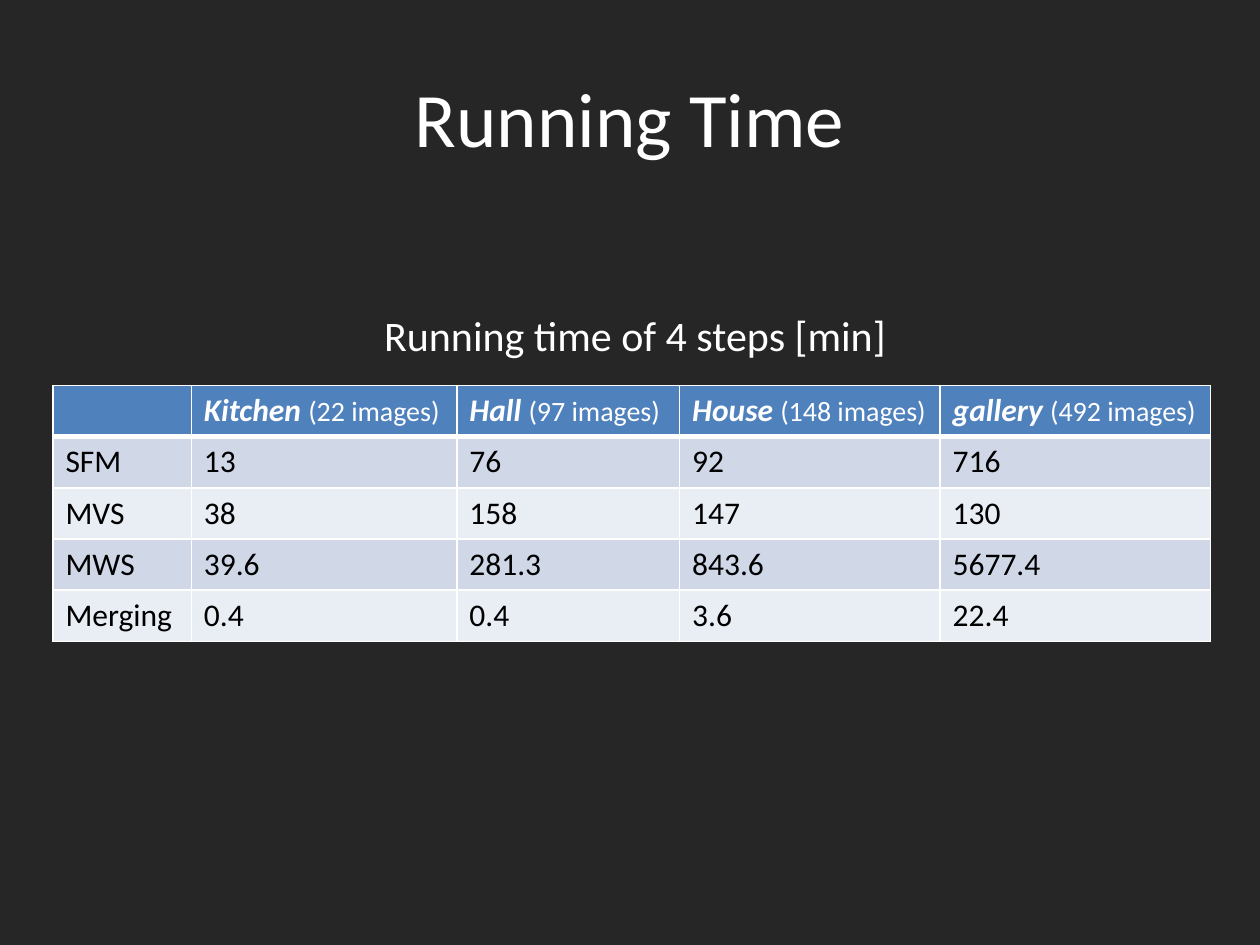
from dataclasses import dataclass

from lxml import etree
from pptx import Presentation
from pptx import util as u
from pptx.dml.color import RGBColor
from pptx.enum import text
from pptx.oxml import ns


@dataclass(frozen=True)
class Theme:
    font: str = "Calibri"
    background: str = "262626"
    light: str = "FFFFFF"
    dark: str = "000000"
    header: str = "4F81BD"
    bands: tuple = ("D0D8E8", "E9EDF4")
    title: int = 44
    caption: int = 24
    cell: int = 18
    note: int = 16
    rule: int = 1
    header_rule: int = 3


THEME = Theme()
WIDTH, HEIGHT = 10, 7.5

SCENES = [("Kitchen", 22), ("Hall", 97), ("House", 148), ("gallery", 492)]
STEPS = [
    ("SFM", "13", "76", "92", "716"),
    ("MVS", "38", "158", "147", "130"),
    ("MWS", "39.6", "281.3", "843.6", "5677.4"),
    ("Merging", "0.4", "0.4", "3.6", "22.4"),
]
COLUMNS = [1.1, 2.11, 1.77, 2.07, 2.15]


def add_text(p, content, size, color=THEME.light, bold=False, italic=False):
    r = p.add_run()
    r.text = content
    r.font.name = THEME.font
    r.font.size = u.Pt(size)
    r.font.bold = bold
    r.font.italic = italic
    r.font.color.rgb = RGBColor.from_string(color)


def place(sp, box):
    sp.left, sp.top, sp.width, sp.height = (u.Inches(v) for v in box)


def add_title(slide, box, content):
    sp = slide.shapes.title
    place(sp, box)
    tf = sp.text_frame
    tf.vertical_anchor = text.MSO_ANCHOR.MIDDLE
    p = tf.paragraphs[0]
    p.alignment = text.PP_ALIGN.CENTER
    add_text(p, content, THEME.title)


def add_caption(slide, box, content):
    sp = slide.shapes.add_textbox(*(u.Inches(v) for v in box))
    tf = sp.text_frame
    tf.word_wrap = False
    tf.auto_size = text.MSO_AUTO_SIZE.SHAPE_TO_FIT_TEXT
    add_text(tf.paragraphs[0], content, THEME.caption)


def format_cell(cell, fill, top, bottom):
    # Borders come before the fill in the cell properties
    tcPr = cell._tc.get_or_add_tcPr()
    widths = {"L": THEME.rule, "R": THEME.rule, "T": top, "B": bottom}
    for side, width in widths.items():
        ln = etree.SubElement(tcPr, ns.qn(f"a:ln{side}"), w=str(u.Pt(width)))
        solid = etree.SubElement(ln, ns.qn("a:solidFill"))
        etree.SubElement(solid, ns.qn("a:srgbClr"), val=THEME.light)
    cell.fill.solid()
    cell.fill.fore_color.rgb = RGBColor.from_string(fill)


def add_times_table(slide, box):
    rows = len(STEPS) + 1
    frame = slide.shapes.add_table(rows, len(COLUMNS), *(u.Inches(v) for v in box))
    table = frame.table
    for column, share in zip(table.columns, COLUMNS):
        column.width = u.Inches(box[2] * share / sum(COLUMNS))

    # Header: scene name and number of images
    for i, cell in enumerate(table.rows[0].cells):
        format_cell(cell, THEME.header, THEME.rule, THEME.header_rule)
        if i:
            scene, count = SCENES[i - 1]
            p = cell.text_frame.paragraphs[0]
            add_text(p, f"{scene} ", THEME.cell, bold=True, italic=True)
            add_text(p, f"({count} images)", THEME.note)

    # Body: one banded row for each step
    for j, step in enumerate(STEPS):
        top = THEME.rule if j else THEME.header_rule
        for cell, value in zip(table.rows[j + 1].cells, step):
            format_cell(cell, THEME.bands[j % 2], top, THEME.rule)
            add_text(cell.text_frame.paragraphs[0], value, THEME.cell, THEME.dark)


def build_slide(prs):
    slide = prs.slides.add_slide(prs.slide_layouts[5])
    fill = slide.background.fill
    fill.solid()
    fill.fore_color.rgb = RGBColor.from_string(THEME.background)
    add_title(slide, (0.05 * WIDTH, 0.04 * HEIGHT, 0.9 * WIDTH, HEIGHT / 6), "Running Time")
    add_times_table(slide, (0.42, 3.06, 9.19, 2.03))
    add_caption(slide, (2.95, 2.41, 4.22, 0.5), "Running time of 4 steps [min]")


def main():
    prs = Presentation()
    prs.slide_width, prs.slide_height = u.Inches(WIDTH), u.Inches(HEIGHT)
    build_slide(prs)
    prs.save("out.pptx")


if __name__ == "__main__":
    main()
